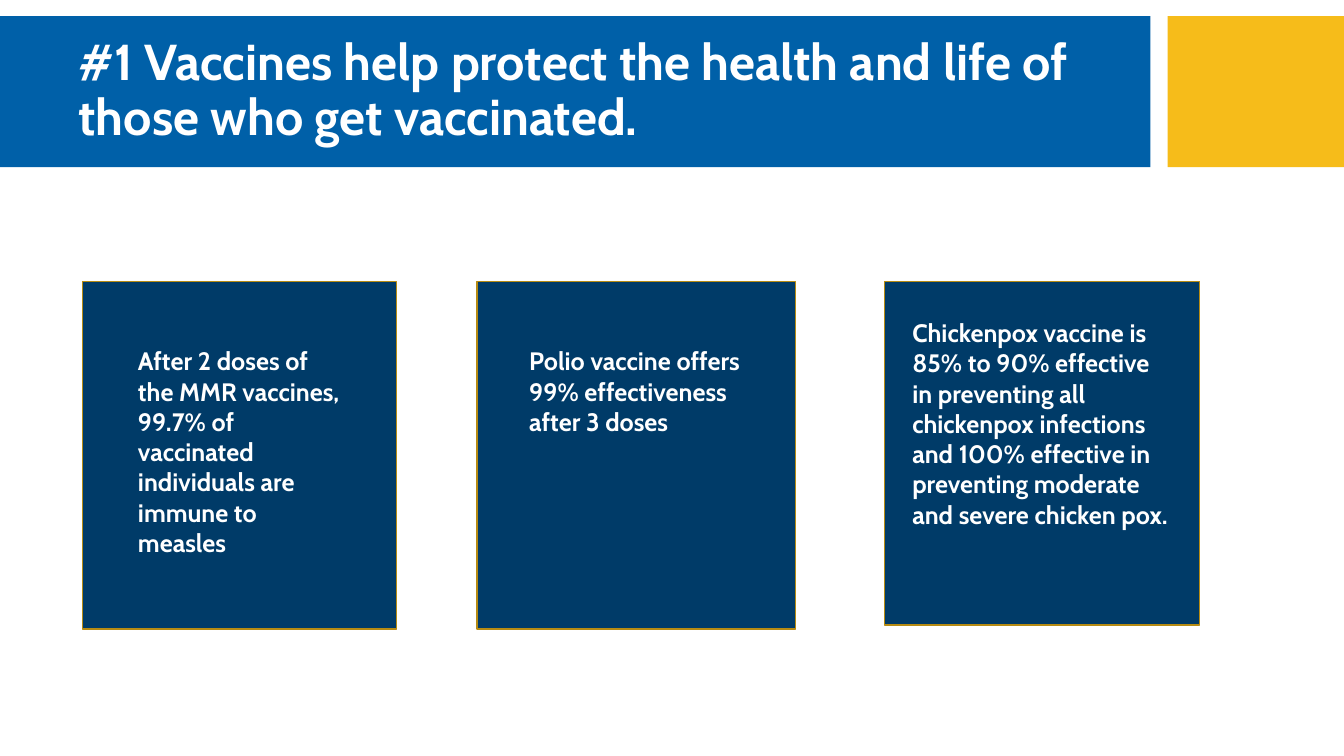
from pptx import Presentation
from pptx.dml.color import RGBColor
from pptx.enum.shapes import MSO_SHAPE
from pptx.enum.text import MSO_ANCHOR, MSO_AUTO_SIZE, PP_ALIGN
from pptx.util import Pt

PX = 9144  # EMU per px, 100 px to the inch
BLUE, YELLOW, NAVY, GOLD, WHITE = "0060A8", "F6BC1A", "003B68", "B68B13", "FFFFFF"


def emu(*lengths):
    return [n * PX for n in lengths]


def rgb(color):
    return RGBColor.from_string(color)


class SlideBuilder:
    font = "Cabin"

    def __init__(self, prs):
        self.s = prs.slides.add_slide(prs.slide_layouts[5])

    def rect(self, x, y, w, h, fill, line=None):
        sp = self.s.shapes.add_shape(MSO_SHAPE.RECTANGLE, *emu(x, y, w, h))
        sp.shadow.inherit = False
        sp.fill.solid()
        sp.fill.fore_color.rgb = rgb(fill)
        if line:
            sp.line.color.rgb = rgb(line)
            sp.line.width = Pt(1)
        else:
            sp.line.fill.background()
        return sp

    def add_run(self, tf, text, size):
        tf.word_wrap = True
        p = tf.paragraphs[0]
        p.alignment = PP_ALIGN.LEFT
        r = p.add_run()
        r.text = text
        r.font.name = self.font
        r.font.size = Pt(size)
        r.font.bold = True
        r.font.color.rgb = rgb(WHITE)
        return p

    def title(self, x, y, w, h, text):
        sp = self.s.shapes.title
        sp.left, sp.top, sp.width, sp.height = emu(x, y, w, h)
        tf = sp.text_frame
        tf.vertical_anchor = MSO_ANCHOR.MIDDLE
        tf.auto_size = MSO_AUTO_SIZE.NONE
        p = self.add_run(tf, text, 36)
        p.line_spacing = 0.9

    def band(self, x, w, fill):
        """Header block placed behind the title."""
        sp = self.rect(x, 16, w, 150, fill)
        self.s.shapes.title.element.addprevious(sp.element)

    def text(self, x, y, w, h, text):
        tf = self.s.shapes.add_textbox(*emu(x, y, w, h)).text_frame
        tf.auto_size = MSO_AUTO_SIZE.SHAPE_TO_FIT_TEXT
        self.add_run(tf, text, 18)


def main():
    prs = Presentation()
    prs.slide_width, prs.slide_height = emu(1333, 750)
    b = SlideBuilder(prs)
    b.band(0, 1141, BLUE)
    b.band(1158, 175, YELLOW)
    b.title(68, 32, 1051, 118,
            "#1 Vaccines help protect the health and life of those who get vaccinated.")

    # card left, width, height; text left, top, width, height; wording
    cards = [
        ((82, 311, 345), (127, 338, 222, 222),
         "After 2 doses of the MMR vaccines, 99.7% of vaccinated individuals "
         "are immune to measles"),
        ((473, 316, 345), (515, 338, 231, 131),
         "Polio vaccine offers 99% effectiveness after 3 doses"),
        ((877, 313, 341), (895, 310, 277, 283),
         "Chickenpox vaccine is 85% to 90% effective in preventing all chickenpox "
         "infections and 100% effective in preventing moderate and severe chicken pox."),
    ]
    for (x, w, h), text_box, wording in cards:
        b.rect(x, 279, w, h, NAVY, GOLD)
        b.text(*text_box, wording)
    prs.save("out.pptx")


if __name__ == "__main__":
    main()
